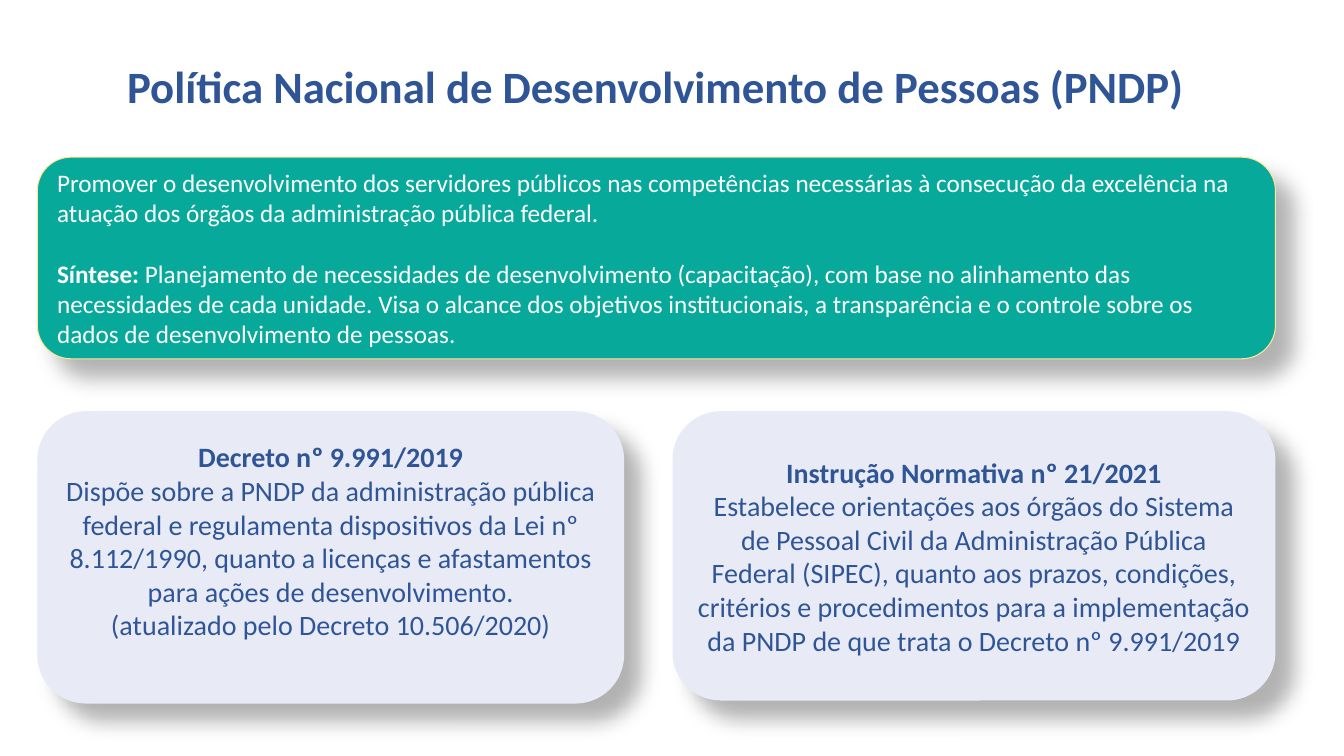
from lxml import etree
from pptx import Presentation
from pptx.dml.color import RGBColor
from pptx.enum.shapes import MSO_SHAPE
from pptx.enum.text import MSO_ANCHOR, MSO_AUTO_SIZE, PP_ALIGN
from pptx.oxml.ns import qn
from pptx.util import Inches, Pt

ROUNDED = MSO_SHAPE.ROUNDED_RECTANGLE
MIDDLE, BOTTOM = MSO_ANCHOR.MIDDLE, MSO_ANCHOR.BOTTOM
LEFT, CENTER = PP_ALIGN.LEFT, PP_ALIGN.CENTER
NO_FIT = MSO_AUTO_SIZE.NONE
TITLE_ONLY = 5

TITLE = "Política Nacional de Desenvolvimento de Pessoas (PNDP)"
SUMMARY = [
    [("Promover o desenvolvimento dos servidores públicos nas competências "
      "necessárias à consecução da excelência na atuação dos órgãos da "
      "administração pública federal.", False)],
    [("Síntese: ", True),
     ("Planejamento de necessidades de desenvolvimento (capacitação), com base "
      "no alinhamento das necessidades de cada unidade. Visa o alcance dos "
      "objetivos institucionais, a transparência e o controle sobre os dados "
      "de desenvolvimento de pessoas.", False)],
]
DECREE = [
    [("Decreto nº 9.991/2019", True)],
    [("Dispõe sobre a PNDP da administração pública federal e regulamenta "
      "dispositivos da Lei nº 8.112/1990, quanto a licenças e afastamentos "
      "para ações de desenvolvimento.", False)],
    [("(atualizado pelo Decreto 10.506/2020)", False)],
]
INSTRUCTION = [
    [("Instrução Normativa nº 21/2021", True)],
    [("Estabelece orientações aos órgãos do Sistema de Pessoal Civil da "
      "Administração Pública Federal (SIPEC), quanto aos prazos, condições, "
      "critérios e procedimentos para a implementação da PNDP de que trata o "
      "Decreto nº 9.991/2019", False)],
]


def rgb(value):
    """Turn a hex string into a colour."""
    return RGBColor.from_string(value)


class Deck:
    """Style of the deck and its current slide."""

    font = "Calibri"
    blue, pale, teal, gold, white = "2F5597", "E8EBF5", "07A99A", "FFE699", "FFFFFF"

    def __init__(self):
        """Start a widescreen presentation with one title-only slide."""
        self.prs = Presentation()
        self.prs.slide_width, self.prs.slide_height = Inches(13.33), Inches(7.5)
        self.s = self.prs.slides.add_slide(self.prs.slide_layouts[TITLE_ONLY])

    def format_run(self, r, size, color, bold):
        """Apply the deck font to a run."""
        r.font.name, r.font.size, r.font.bold = self.font, Pt(size), bold
        r.font.color.rgb = rgb(color)

    def title(self, text, x, y, w, h):
        """Place and format the title placeholder."""
        sp = self.s.shapes.title
        sp.left, sp.top, sp.width, sp.height = map(Inches, (x, y, w, h))
        tf = sp.text_frame
        tf.text = text
        tf.auto_size, tf.vertical_anchor = NO_FIT, BOTTOM
        p = tf.paragraphs[0]
        p.alignment, p.line_spacing = CENTER, 0.9
        self.format_run(p.runs[0], 32, self.blue, True)

    def shadow(self, sp):
        """Give a shape a soft shadow towards the lower right."""
        sp.shadow.inherit = False
        effects = sp._element.spPr.find(qn("a:effectLst"))
        outer = etree.SubElement(effects, qn("a:outerShdw"), blurRad=str(Pt(15)),
                                 dist=str(Pt(18)), dir="2700000", rotWithShape="0")
        color = etree.SubElement(outer, qn("a:srgbClr"), val="000000")
        etree.SubElement(color, qn("a:alpha"), val="30000")

    def card(self, paragraphs, x, y, w, h, fill, color, size, align=CENTER,
             line=None, gap=0, bottom=0.05):
        """Add a rounded card with rich text and a shadow."""
        sp = self.s.shapes.add_shape(ROUNDED, *map(Inches, (x, y, w, h)))
        sp.fill.solid()
        sp.fill.fore_color.rgb = rgb(fill)
        if line:
            sp.line.color.rgb, sp.line.width = rgb(line), Pt(0.75)
        else:
            sp.line.fill.background()
        self.shadow(sp)
        tf = sp.text_frame
        tf.word_wrap, tf.vertical_anchor = True, MIDDLE
        tf.margin_bottom = Inches(bottom)
        for i, parts in enumerate(paragraphs):
            p = tf.add_paragraph() if i else tf.paragraphs[0]
            p.alignment, p.space_before = align, Pt(gap if i else 0)
            for text, bold in parts:
                r = p.add_run()
                r.text = text
                self.format_run(r, size, color, bold)


def main():
    """Build and save the slide."""
    deck = Deck()
    deck.title(TITLE, 0.47, -1.44, 12.07, 2.61)
    deck.card(DECREE, 0.37, 4.08, 5.82, 2.9, deck.pale, deck.blue, 20, bottom=0.38)
    deck.card(INSTRUCTION, 6.67, 4.08, 5.98, 2.87, deck.pale, deck.blue, 20)
    deck.card(SUMMARY, 0.37, 1.56, 12.28, 2, deck.teal, deck.white, 18,
              align=LEFT, line=deck.gold, gap=22)
    deck.prs.save("out.pptx")


if __name__ == "__main__":
    main()
